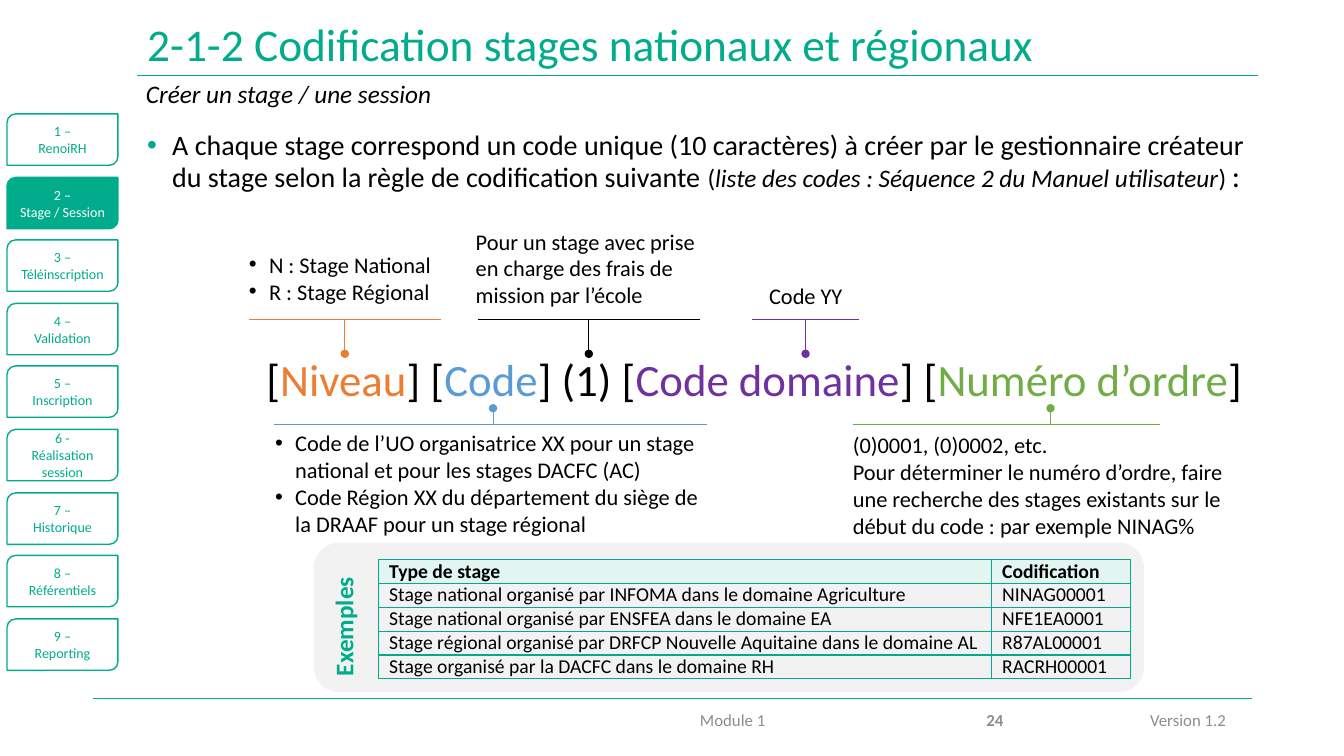
from dataclasses import dataclass

from lxml.etree import SubElement
from pptx import Presentation
from pptx.dml.color import RGBColor
from pptx.enum.shapes import MSO_CONNECTOR as Connector, MSO_SHAPE as Shape
from pptx.enum.text import MSO_ANCHOR as Anchor, MSO_AUTO_SIZE as AutoSize, PP_ALIGN as Align
from pptx.oxml.ns import qn
from pptx.util import Pt

EMU_PER_PX = 9144


@dataclass(frozen=True)
class Theme:
    """Colours, font and type sizes of the slide."""
    font: str = "Calibri"
    green: str = "00AC8C"
    mint: str = "E3F5F1"
    panel: str = "F2F2F2"
    grey: str = "8C8C8C"
    black: str = "000000"
    white: str = "FFFFFF"
    orange: str = "ED7D31"
    blue: str = "5B9BD5"
    purple: str = "7030A0"
    lime: str = "70AD47"
    title: float = 32.4
    formula: int = 32
    marker: int = 22
    rule: int = 20
    subtitle: int = 18
    callout: int = 16
    table: int = 14
    footer: int = 12
    tab: int = 10


@dataclass(frozen=True)
class Box:
    """A rectangle in px."""
    left: int
    top: int
    width: int
    height: int

    def emu(self):
        """Return left, top, width and height in EMU."""
        return tuple(map(px, (self.left, self.top, self.width, self.height)))


THEME = Theme()


def px(length):
    """Turn px into EMU."""
    return length * EMU_PER_PX


def apply(target, formats):
    """Set every attribute in formats on target."""
    for name, value in formats.items():
        setattr(target, name, value)


def add_bullet(paragraph, indent, color):
    """Give a paragraph a hanging round bullet."""
    properties = paragraph._p.get_or_add_pPr()
    properties.set("marL", str(px(indent)))
    properties.set("indent", str(-px(indent)))
    SubElement(SubElement(properties, qn("a:buClr")), qn("a:srgbClr"), val=color)
    SubElement(properties, qn("a:buFont"), typeface="Arial")
    SubElement(properties, qn("a:buChar"), char="•")


def write(frame, paragraphs, size, color=THEME.black, bullet=0, bullet_color=THEME.black,
          anchor=Anchor.TOP, font=None, **layout):
    """Fill a text frame with paragraphs of (text, own font formats) runs."""
    apply(frame, {"word_wrap": True, "auto_size": AutoSize.NONE, "vertical_anchor": anchor})
    for index, runs in enumerate(paragraphs):
        paragraph = frame.add_paragraph() if index else frame.paragraphs[0]
        if bullet:
            add_bullet(paragraph, bullet, bullet_color)
        apply(paragraph, layout)
        for text, own in [(runs, {})] if isinstance(runs, str) else runs:
            formats = {"name": THEME.font, "size": size, "color": color, **(font or {}), **own}
            tint = RGBColor.from_string(formats.pop("color"))
            formats["size"] = Pt(formats["size"])
            for number, line in enumerate(text.split("\n")):
                if number:
                    paragraph.add_line_break()
                run = paragraph.add_run()
                run.text = line
                apply(run.font, formats)
                run.font.color.rgb = tint


def add_text(slide, box, paragraphs, size, **formats):
    """Add a text box and return it."""
    label = slide.shapes.add_textbox(*box.emu())
    write(label.text_frame, paragraphs, size, **formats)
    return label


def add_line(slide, start, end, color, dot=False):
    """Add a thin line, with a round end if dot is set."""
    line = slide.shapes.add_connector(Connector.STRAIGHT, *map(px, start + end))
    line.line.color.rgb = RGBColor.from_string(color)
    line.line.width = Pt(0.5)
    if dot:
        SubElement(line.line._get_or_add_ln(), qn("a:tailEnd"), type="oval")
    SubElement(line._element.spPr, qn("a:effectLst"))


def add_block(slide, kind, box, line, fill=None):
    """Add a flat preset shape and return it."""
    block = slide.shapes.add_shape(kind, *box.emu())
    block.shadow.inherit = False
    block.line.color.rgb = RGBColor.from_string(line)
    block.line.width = Pt(1)
    if fill:
        block.fill.solid()
        block.fill.fore_color.rgb = RGBColor.from_string(fill)
    else:
        block.fill.background()
    return block


def add_header(slide, box):
    """Place the title, its rule and the subtitle."""
    title = slide.shapes.title
    apply(title, dict(zip(("left", "top", "width", "height"), box.emu())))
    write(title.text_frame, ["2-1-2 Codification stages nationaux et régionaux"], THEME.title,
          color=THEME.green, anchor=Anchor.MIDDLE, alignment=Align.LEFT, line_spacing=0.9)
    bottom = box.top + box.height
    add_line(slide, (box.left, bottom), (box.left + box.width, bottom), THEME.green)
    add_text(slide, Box(box.left - 1, bottom - 2, 333, 40), ["Créer un stage / une session"],
             THEME.subtitle, font={"italic": True})


def add_navigation(slide, box, names, current):
    """Stack the chapter tabs evenly and fill the current one."""
    tab_height = 51
    pitch = (box.height - tab_height) / (len(names) - 1)
    for index, name in enumerate(names):
        active = index == current
        place = Box(box.left, box.top + round(index * pitch), box.width, tab_height)
        tab = add_block(slide, Shape.ROUND_2_DIAG_RECTANGLE, place, THEME.green,
                        THEME.green if active else None)
        tab.adjustments[0], tab.adjustments[1] = 0.167, 0
        write(tab.text_frame, [name], THEME.tab, color=THEME.white if active else THEME.green,
              anchor=Anchor.MIDDLE, alignment=Align.CENTER)


def add_formula(slide, box, parts):
    """Write the code pattern with each part in its colour."""
    runs = [(text, {"color": color}) for text, color in parts]
    add_text(slide, box, [runs], THEME.formula, alignment=Align.CENTER)


def add_callout(slide, box, formula, color, bar, stem, paragraphs, bullet=0):
    """Add a note with a bar and a dotted stem towards the formula; bar and stem start at box.left."""
    formula_bottom = formula.top + formula.height
    above = box.top < formula.top
    bar_y = formula.top - 27 if above else formula_bottom + 13
    dot_y = formula.top + 7 if above else formula_bottom - 3
    bar_left, bar_width = box.left + bar[0], bar[1]
    add_line(slide, (bar_left, bar_y), (bar_left + bar_width, bar_y), color)
    add_line(slide, (box.left + stem, bar_y), (box.left + stem, dot_y), color, dot=True)
    add_text(slide, box, paragraphs, THEME.callout, bullet=bullet)


def format_cell(cell, text, header):
    """Write, border and fill one cell."""
    apply(cell, {"margin_left": px(11), "margin_right": px(7), "margin_top": 0, "margin_bottom": 0})
    write(cell.text_frame, [text], THEME.table, font={"bold": header})
    properties = cell._tc.get_or_add_tcPr()
    for side in ("a:lnL", "a:lnR", "a:lnT", "a:lnB"):
        border = SubElement(properties, qn(side), w=str(Pt(1)))
        SubElement(SubElement(border, qn("a:solidFill")), qn("a:srgbClr"), val=THEME.green)
    if header:
        cell.fill.solid()
        cell.fill.fore_color.rgb = RGBColor.from_string(THEME.mint)
    else:
        cell.fill.background()


def add_examples(slide, box, rows):
    """Place the grey panel with its turned heading and the table of codes."""
    add_block(slide, Shape.ROUNDED_RECTANGLE, box, THEME.panel, THEME.panel)
    heading = add_text(slide, Box(box.left - 45, box.top + 48, 147, 40), ["Exemples"],
                       THEME.subtitle, color=THEME.green, font={"bold": True})
    heading.rotation = 270
    place = Box(box.left + 63, box.top + 16, 746, 117)
    table = slide.shapes.add_table(len(rows), 2, *place.emu()).table
    apply(table, {"first_row": False, "horz_banding": False})
    for column, width in zip(table.columns, (608, 138)):
        column.width = px(width)
    for row_index, row in enumerate(rows):
        for column_index, text in enumerate(row):
            format_cell(table.cell(row_index, column_index), text, row_index == 0)


def add_footer(slide, box):
    """Place the footer rule, module, page number and version."""
    add_line(slide, (box.left, box.top), (box.left + box.width, box.top), THEME.green)
    for text, offset, width, align, bold in (("Module 1", 350, 327, Align.RIGHT, False),
                                             ("24", 808, 105, Align.RIGHT, True),
                                             ("Version 1.2", 1039, 113, Align.LEFT, False)):
        add_text(slide, Box(box.left + offset, box.top + 1, width, box.height), [text],
                 THEME.footer, color=THEME.grey, anchor=Anchor.MIDDLE, alignment=align,
                 font={"bold": bold})


def build_coding_slide(slide):
    """Lay out the slide on the coding of training courses."""
    add_header(slide, Box(136, 18, 1112, 57))
    add_navigation(slide, Box(7, 113, 110, 552), [
        "1 –\nRenoiRH", "2 –\nStage / Session", "3 –\nTéléinscription", "4 –\nValidation",
        "5 –\nInscription", "6 -\nRéalisation session", "7 –\nHistorique", "8 –\nRéférentiels",
        "9 –\nReporting"], current=1)
    note = {"size": THEME.subtitle}
    add_text(slide, Box(136, 125, 1125, 65), [[
        ("A chaque stage correspond un code unique (10 caractères) à créer par le gestionnaire "
         "créateur du stage selon la règle de codification suivante", {}),
        (" ", {"size": THEME.marker}), ("(", note),
        ("liste des codes : Séquence 2 du Manuel utilisateur", {**note, "italic": True}),
        (") ", note), (":", {"size": THEME.marker})]],
        THEME.rule, bullet=25, bullet_color=THEME.green, line_spacing=0.9)
    formula = Box(248, 344, 1000, 64)
    add_formula(slide, formula, [
        ("[", THEME.black), ("Niveau", THEME.orange), ("] [", THEME.black), ("Code", THEME.blue),
        ("] (1) [", THEME.black), ("Code domaine", THEME.purple), ("] [", THEME.black),
        ("Numéro d’ordre", THEME.lime), ("]", THEME.black)])
    for box, color, bar, stem, paragraphs, bullet in (
            (Box(237, 244, 207, 64), THEME.orange, (10, 190), 105,
             ["N : Stage National", "R : Stage Régional"], 20),
            (Box(462, 221, 243, 91), THEME.black, (12, 220), 122,
             ["Pour un stage avec prise en charge des frais de mission par l’école"], 0),
            (Box(753, 275, 96, 37), THEME.purple, (-7, 106), 46, ["Code YY"], 0),
            (Box(263, 421, 450, 118), THEME.blue, (9, 429), 226,
             ["Code de l’UO organisatrice XX pour un stage national et pour les stages DACFC (AC)",
              "Code Région XX du département du siège de la DRAAF pour un stage régional"], 20),
            (Box(836, 423, 412, 118), THEME.lime, (10, 305), 206,
             ["(0)0001, (0)0002, etc.",
              "Pour déterminer le numéro d’ordre, faire une recherche des stages existants sur le "
              "début du code : par exemple NINAG%"], 0)):
        add_callout(slide, box, formula, color, bar, stem, paragraphs, bullet)
    add_examples(slide, Box(312, 539, 822, 147), [
        ("Type de stage", "Codification"),
        ("Stage national organisé par INFOMA dans le domaine Agriculture", "NINAG00001"),
        ("Stage national organisé par ENSFEA dans le domaine EA", "NFE1EA0001"),
        ("Stage régional organisé par DRFCP Nouvelle Aquitaine dans le domaine AL", "R87AL00001"),
        ("Stage organisé par la DACFC dans le domaine RH", "RACRH00001")])
    add_footer(slide, Box(92, 693, 1150, 41))


def main():
    """Build and save the presentation."""
    deck = Presentation()
    apply(deck, {"slide_width": px(1333), "slide_height": px(750)})
    build_coding_slide(deck.slides.add_slide(deck.slide_layouts[5]))
    deck.save("out.pptx")


if __name__ == "__main__":
    main()
